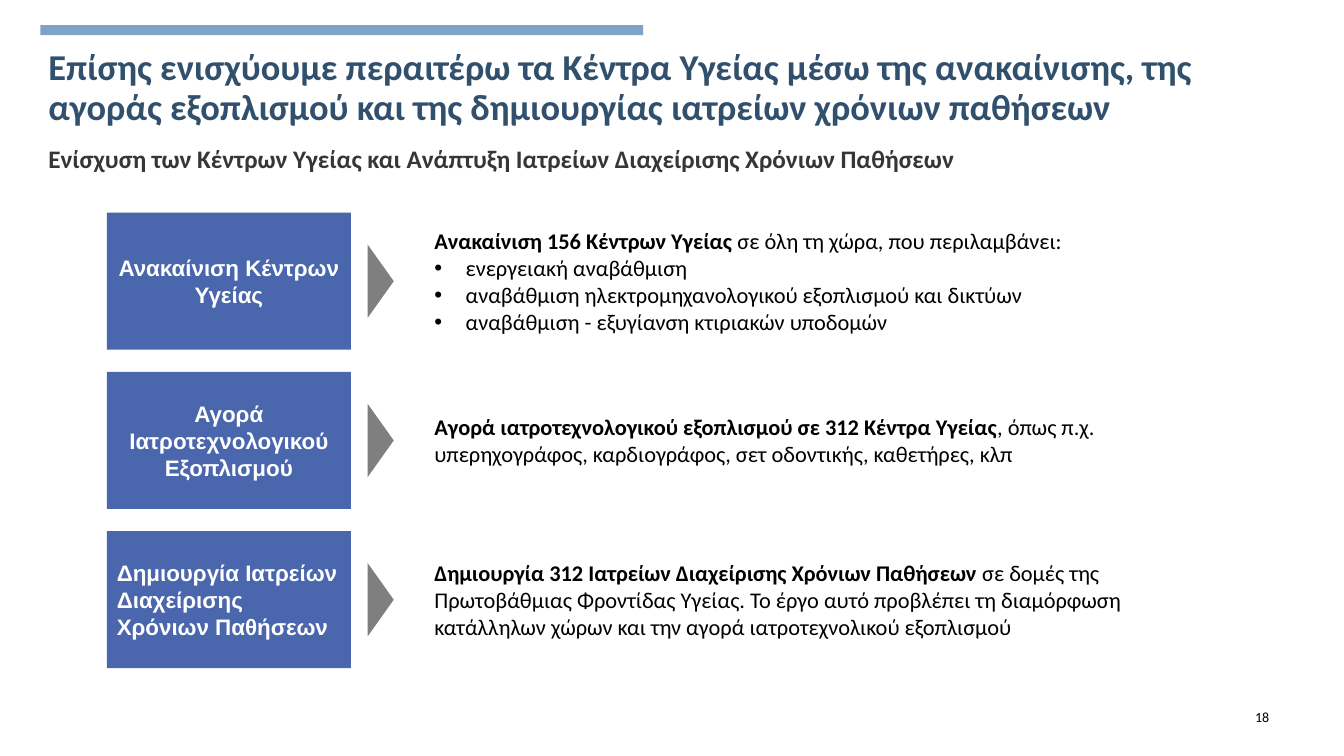
from dataclasses import dataclass

from lxml.etree import SubElement
from pptx import Presentation
from pptx.dml.color import RGBColor
from pptx.enum.shapes import MSO_SHAPE as SHAPE
from pptx.enum.text import MSO_ANCHOR as ANCHOR, PP_ALIGN as ALIGN
from pptx.oxml.ns import qn
from pptx.util import Inches, Pt

COLORS = {
    "bar": "7EA3C6",
    "title": "31506D",
    "subtitle": "363636",
    "box": "4A66AC",
    "arrow": "7F7F7F",
    "black": "000000",
    "white": "FFFFFF",
}
ROW_TOP, ROW_STEP, ROW_H = 2.11, 1.58, 1.36
BOX_X, BOX_W = 1.06, 2.42
DETAIL_X, DETAIL_W = 4.21, 7.51
ARROW_X, ARROW_W, ARROW_H = 3.41, 0.73, 0.26
BULLET_INDENT = 0.31


@dataclass(frozen=True)
class Style:
    size: float
    color: str
    font: str = "Calibri"
    bold: bool = False


@dataclass(frozen=True)
class Action:
    label: str
    lead: str
    rest: str
    bullets: tuple[str, ...] = ()
    align: ALIGN = ALIGN.CENTER


TITLE = Style(26, "title", bold=True)
SUBTITLE = Style(18, "subtitle", bold=True)
NUMBER = Style(10, "black")
LABEL = Style(16, "white", "Arial", True)
LEAD = Style(16, "black", bold=True)
BODY = Style(16, "black")

ACTIONS = (
    Action(
        "Ανακαίνιση Κέντρων Υγείας",
        "Ανακαίνιση 156 Κέντρων Υγείας",
        " σε όλη τη χώρα, που περιλαμβάνει:",
        (
            "ενεργειακή αναβάθμιση",
            "αναβάθμιση ηλεκτρομηχανολογικού εξοπλισμού και δικτύων",
            "αναβάθμιση - εξυγίανση κτιριακών υποδομών",
        ),
    ),
    Action(
        "Αγορά Ιατροτεχνολογικού Εξοπλισμού",
        "Αγορά ιατροτεχνολογικού εξοπλισμού σε 312 Κέντρα Υγείας",
        ", όπως π.χ. υπερηχογράφος, καρδιογράφος, σετ οδοντικής, καθετήρες, κλπ",
    ),
    Action(
        "Δημιουργία Ιατρείων Διαχείρισης Χρόνιων Παθήσεων",
        "Δημιουργία 312 Ιατρείων Διαχείρισης Χρόνιων Παθήσεων ",
        "σε δομές της Πρωτοβάθμιας Φροντίδας Υγείας. Το έργο αυτό προβλέπει "
        "τη διαμόρφωση κατάλληλων χώρων και την αγορά ιατροτεχνολικού εξοπλισμού",
        align=ALIGN.LEFT,
    ),
)


def rgb(name: str) -> RGBColor:
    return RGBColor.from_string(COLORS[name])


def add_run(p, text: str, style: Style) -> None:
    r = p.add_run()
    r.text = text
    r.font.size = Pt(style.size)
    r.font.name = style.font
    r.font.bold = style.bold
    r.font.color.rgb = rgb(style.color)


def set_frame(tf, anchor: ANCHOR, left: float = 0.1, vertical: float = 0.05) -> None:
    tf.word_wrap = True
    tf.vertical_anchor = anchor
    tf.margin_left, tf.margin_right = Inches(left), Inches(0.1)
    tf.margin_top = tf.margin_bottom = Inches(vertical)


def add_text(s, x: float, y: float, w: float, h: float,
             anchor: ANCHOR = ANCHOR.MIDDLE, left: float = 0.1, vertical: float = 0.05):
    tf = s.shapes.add_textbox(Inches(x), Inches(y), Inches(w), Inches(h)).text_frame
    set_frame(tf, anchor, left, vertical)
    return tf


def add_block(s, kind: SHAPE, x: float, y: float, w: float, h: float, fill: str):
    sp = s.shapes.add_shape(kind, Inches(x), Inches(y), Inches(w), Inches(h))
    sp.shadow.inherit = False
    sp.fill.solid()
    sp.fill.fore_color.rgb = rgb(fill)
    sp.line.fill.background()
    return sp


def add_bullet(tf, text: str) -> None:
    p = tf.add_paragraph()
    pPr = p._p.get_or_add_pPr()
    pPr.set("marL", str(Inches(BULLET_INDENT)))
    pPr.set("indent", str(-Inches(BULLET_INDENT)))
    SubElement(pPr, qn("a:buFont"), typeface="Arial")
    SubElement(pPr, qn("a:buChar"), char="•")
    add_run(p, text, BODY)


def add_action(s, action: Action, y: float) -> None:
    tf = add_text(s, DETAIL_X, y, DETAIL_W, ROW_H)
    p = tf.paragraphs[0]
    add_run(p, action.lead, LEAD)
    add_run(p, action.rest, BODY)
    for bullet in action.bullets:
        add_bullet(tf, bullet)

    box = add_block(s, SHAPE.RECTANGLE, BOX_X, y, BOX_W, ROW_H, "box")
    set_frame(box.text_frame, ANCHOR.MIDDLE)
    p = box.text_frame.paragraphs[0]
    p.alignment = action.align
    add_run(p, action.label, LABEL)

    arrow_y = y + (ROW_H - ARROW_H) / 2
    arrow = add_block(s, SHAPE.ISOSCELES_TRIANGLE, ARROW_X, arrow_y, ARROW_W, ARROW_H, "arrow")
    arrow.rotation = 90


def main() -> None:
    prs = Presentation()
    prs.slide_width, prs.slide_height = Inches(13.33), Inches(7.5)
    s = prs.slides.add_slide(prs.slide_layouts[6])

    add_block(s, SHAPE.RECTANGLE, 0.4, 0.25, 5.98, 0.1, "bar")

    p = add_text(s, 0.36, 0.44, 12.56, 0.91, ANCHOR.TOP, left=0.12).paragraphs[0]
    p.line_spacing = 0.9
    add_run(p, "Επίσης ενισχύουμε περαιτέρω τα Κέντρα Υγείας μέσω της ανακαίνισης, της "
               "αγοράς εξοπλισμού και της δημιουργίας ιατρείων χρόνιων παθήσεων", TITLE)

    p = add_text(s, 0.36, 1.37, 12.4, 0.4, left=0.12).paragraphs[0]
    add_run(p, "Ενίσχυση των Κέντρων Υγείας και Ανάπτυξη Ιατρείων Διαχείρισης "
               "Χρόνιων Παθήσεων", SUBTITLE)

    for i, action in enumerate(ACTIONS):
        add_action(s, action, ROW_TOP + i * ROW_STEP)

    p = add_text(s, 12.35, 6.97, 0.57, 0.28, vertical=0.1).paragraphs[0]
    add_run(p, "18", NUMBER)

    prs.save("out.pptx")


if __name__ == "__main__":
    main()
